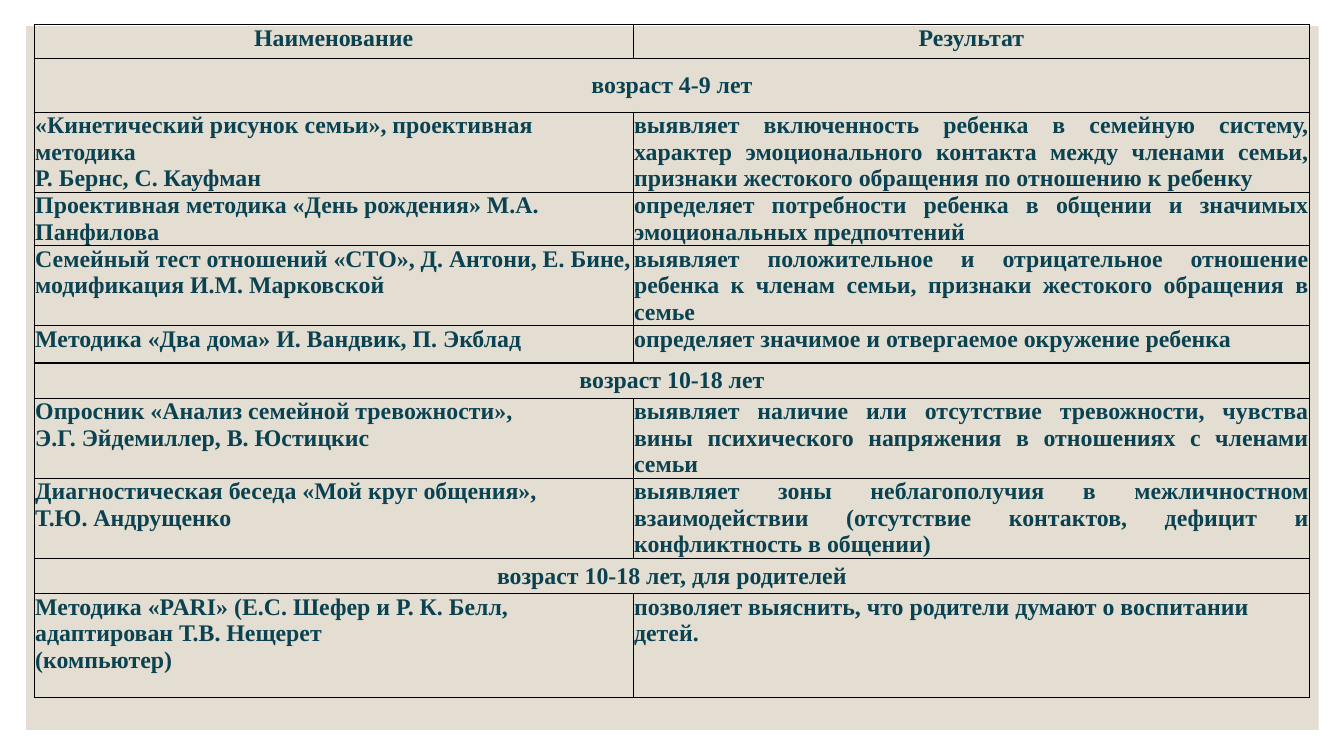
from dataclasses import dataclass

from lxml.etree import SubElement
from pptx import Presentation
from pptx.dml.color import RGBColor
from pptx.enum.shapes import MSO_SHAPE as Shape
from pptx.enum.text import MSO_ANCHOR as Anchor, PP_ALIGN as Align
from pptx.oxml.ns import qn
from pptx.slide import Slide
from pptx.table import Table, _Cell as Cell
from pptx.util import Emu, Inches, Pt


@dataclass(frozen=True)
class Theme:
    font: str = "Times New Roman"
    size: Pt = Pt(17)
    ink: str = "0A4252"
    panel: str = "E3DED1"
    border: str = "000000"
    border_width: Pt = Pt(1)
    side_margin: Emu = Inches(0.01)


@dataclass(frozen=True)
class Row:
    """One table row; without a result it is a heading across both columns."""
    height: float  # percent of the slide height
    name: str
    result: str = ""
    name_align: Align = Align.LEFT
    result_align: Align = Align.JUSTIFY


THEME = Theme()
WIDTH, HEIGHT = Inches(13.33), Inches(7.5)
PANEL = (1.95, 3.47, 96.17, 93.07)  # left, top, width, height in percent
TABLE_LEFT, TABLE_TOP = 2.55, 3.27
COLUMNS = (44.56, 50.34)
ONE_LINE, TWO_LINES, THREE_LINES = 4.67, 7.07, 10.6

ROWS = (
    Row(4.5, "Наименование", "Результат", Align.CENTER, Align.CENTER),
    Row(TWO_LINES, "возраст 4-9 лет"),
    Row(THREE_LINES,
        "«Кинетический рисунок семьи», проективная методика\nР. Бернс, С. Кауфман",
        "выявляет включенность ребенка в семейную систему, характер эмоционального "
        "контакта между членами семьи, признаки жестокого обращения по отношению к ребенку"),
    Row(TWO_LINES,
        "Проективная методика «День рождения» М.А. Панфилова",
        "определяет потребности ребенка в общении и значимых эмоциональных предпочтений"),
    Row(THREE_LINES,
        "Семейный тест отношений «СТО», Д. Антони, Е. Бине, модификация И.М. Марковской",
        "выявляет положительное и отрицательное отношение ребенка к членам семьи, "
        "признаки жестокого обращения в семье"),
    Row(4.93,
        "Методика «Два дома» И. Вандвик, П. Экблад",
        "определяет значимое и отвергаемое окружение ребенка"),
    Row(ONE_LINE, "возраст 10-18 лет"),
    Row(THREE_LINES,
        "Опросник «Анализ семейной тревожности»,\nЭ.Г. Эйдемиллер, В. Юстицкис",
        "выявляет наличие или отсутствие тревожности, чувства вины психического "
        "напряжения в отношениях с членами семьи"),
    Row(THREE_LINES,
        "Диагностическая беседа «Мой круг общения»,\nТ.Ю. Андрущенко",
        "выявляет зоны неблагополучия в межличностном взаимодействии "
        "(отсутствие контактов, дефицит и конфликтность в общении)"),
    Row(ONE_LINE, "возраст 10-18 лет, для родителей"),
    Row(13.73,
        "Методика «PARI» (Е.С. Шефер и Р. К. Белл, адаптирован Т.В. Нещерет\n(компьютер)",
        "позволяет выяснить, что родители думают о воспитании детей.",
        result_align=Align.LEFT),
)


def across(percent: float) -> Emu:
    return Emu(round(WIDTH * percent / 100))


def down(percent: float) -> Emu:
    return Emu(round(HEIGHT * percent / 100))


def add_panel(page: Slide) -> None:
    left, top, width, height = PANEL
    panel = page.shapes.add_shape(
        Shape.RECTANGLE, across(left), down(top), across(width), down(height))
    panel.shadow.inherit = False
    panel.fill.solid()
    panel.fill.fore_color.rgb = RGBColor.from_string(THEME.panel)
    panel.line.fill.background()


def add_borders(cell: Cell) -> None:
    """Put the four edge lines ahead of the cell's fill, as the schema asks."""
    properties = cell._tc.get_or_add_tcPr()
    for place, edge in enumerate(("a:lnL", "a:lnR", "a:lnT", "a:lnB")):
        line = SubElement(properties, qn(edge), w=str(THEME.border_width))
        fill = SubElement(line, qn("a:solidFill"))
        SubElement(fill, qn("a:srgbClr"), val=THEME.border)
        properties.insert(place, line)


def write(cell: Cell, text: str, align: Align) -> None:
    cell.text_frame.text = text
    for para in cell.text_frame.paragraphs:
        para.alignment = align
        for span in para.runs:
            span.font.name = THEME.font
            span.font.size = THEME.size
            span.font.bold = True
            span.font.color.rgb = RGBColor.from_string(THEME.ink)


def fill_row(table: Table, index: int, row: Row) -> None:
    table.rows[index].height = down(row.height)
    name, result = table.rows[index].cells
    for cell in (name, result):
        cell.margin_left = cell.margin_right = THEME.side_margin
        cell.margin_top = cell.margin_bottom = 0
        cell.fill.background()
        add_borders(cell)
    if row.result:
        write(name, row.name, row.name_align)
        write(result, row.result, row.result_align)
    else:
        name.merge(result)
        name.vertical_anchor = Anchor.MIDDLE
        write(name, row.name, Align.CENTER)


def add_methods_table(page: Slide) -> None:
    frame = page.shapes.add_table(
        len(ROWS), len(COLUMNS), across(TABLE_LEFT), down(TABLE_TOP),
        across(sum(COLUMNS)), down(sum(row.height for row in ROWS)))
    table = frame.table
    table.first_row = table.horz_banding = False
    for column, width in zip(table.columns, COLUMNS):
        column.width = across(width)
    for index, row in enumerate(ROWS):
        fill_row(table, index, row)


def main() -> None:
    deck = Presentation()
    deck.slide_width, deck.slide_height = WIDTH, HEIGHT
    page = deck.slides.add_slide(deck.slide_layouts[6])
    add_panel(page)
    add_methods_table(page)
    deck.save("out.pptx")


if __name__ == "__main__":
    main()
